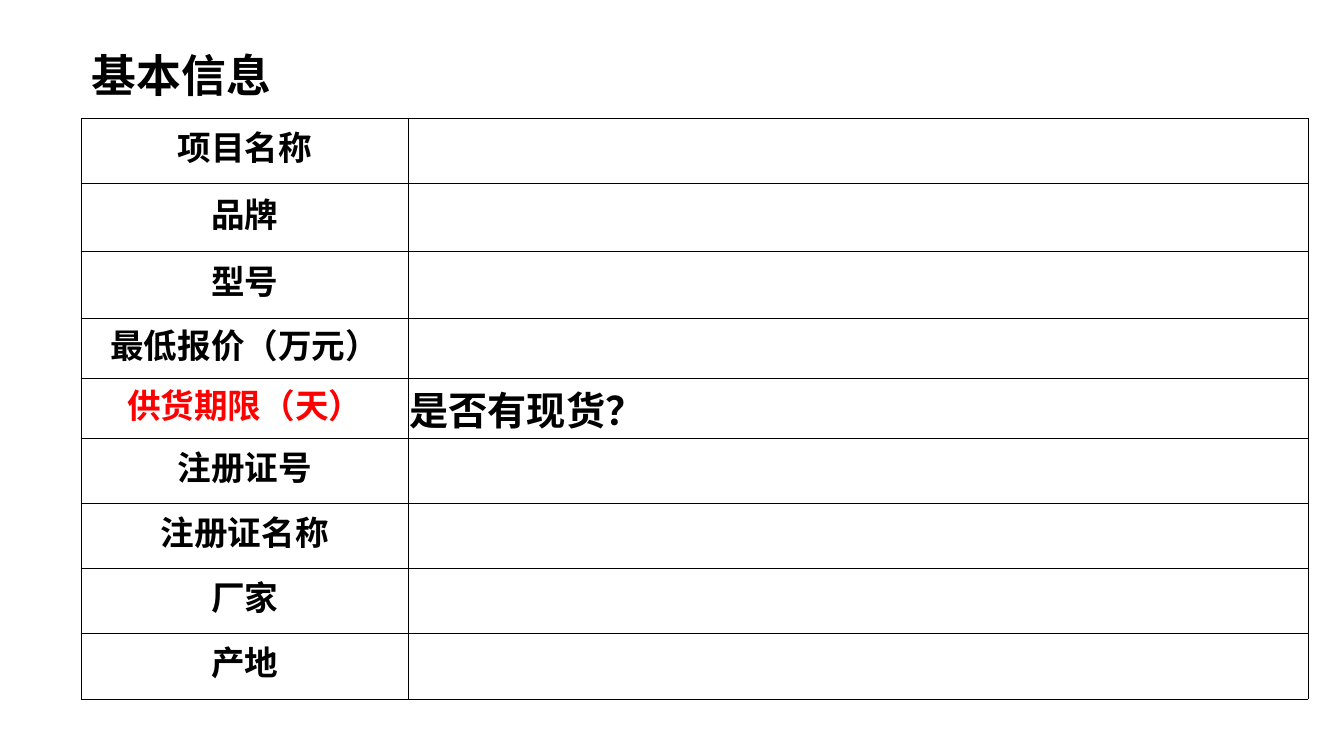
from dataclasses import dataclass
from lxml import etree
from pptx import Presentation
from pptx import util as u
from pptx.dml import color
from pptx.enum import text
from pptx.oxml import ns


@dataclass(frozen=True)
class Theme:
    ink: str = "000000"
    alert: str = "FF0000"
    sans: str = "Noto Sans CJK SC"
    latin: str = "Arial"
    title: int = 32
    note: int = 28
    label: int = 24
    rule: float = 0.5


THEME = Theme()
TALL, MID, LOW = u.Cm(1.7), u.Cm(1.64), u.Cm(1.51)
ROWS = [
    ("项目名称", "", MID),
    ("品牌", "", TALL),
    ("型号", "", TALL),
    ("最低报价（万元）", "", LOW),
    ("供货期限（天）", "是否有现货？", LOW),
    ("注册证号", "", MID),
    ("注册证名称", "", MID),
    ("厂家", "", MID),
    ("产地", "", MID),
]
URGENT = "供货期限（天）"


def add_run(para, words, size, face, ink=THEME.ink):
    run = para.add_run()
    run.text = words
    font = run.font
    font.size, font.bold, font.name = u.Pt(size), True, face
    font.color.rgb = color.RGBColor.from_string(ink)
    east = etree.SubElement(run._r.get_or_add_rPr(), ns.qn("a:ea"))
    east.set("typeface", face)


def add_title(slide, words):
    box = slide.shapes.add_textbox(u.Cm(2.06), u.Cm(1.07), u.Cm(11), u.Cm(1.6))
    box.text_frame.word_wrap = True
    add_run(box.text_frame.paragraphs[0], words, THEME.title, THEME.sans)


def rule_cell(cell):
    props = cell._tc.get_or_add_tcPr()
    for rank, side in enumerate(("lnL", "lnR", "lnT", "lnB")):
        line = etree.Element(ns.qn(f"a:{side}"), w=str(u.Pt(THEME.rule)))
        fill = etree.SubElement(line, ns.qn("a:solidFill"))
        etree.SubElement(fill, ns.qn("a:srgbClr"), val=THEME.ink)
        props.insert(rank, line)


def style_cell(cell):
    cell.fill.background()
    cell.margin_left = cell.margin_right = cell.margin_top = u.Cm(0.03)
    cell.margin_bottom = u.Cm(0.13)
    rule_cell(cell)


def add_label(cell, words):
    cell.vertical_anchor = text.MSO_ANCHOR.MIDDLE
    para = cell.text_frame.paragraphs[0]
    para.alignment = text.PP_ALIGN.CENTER
    ink = THEME.alert if words == URGENT else THEME.ink
    add_run(para, words, THEME.label, THEME.latin, ink)


def add_form(slide, rows):
    high = sum(row[2] for row in rows)
    frame = slide.shapes.add_table(
        len(rows), 2, u.Cm(2.04), u.Cm(2.99), u.Cm(30.92), high)
    table = frame.table
    table.first_row = table.horz_banding = False
    for col, wide in zip(table.columns, (8.25, 22.67)):
        col.width = u.Cm(wide)
    for row, (label, note, tall) in zip(table.rows, rows):
        row.height = tall
        left, right = row.cells
        style_cell(left)
        style_cell(right)
        add_label(left, label)
        if note:
            para = right.text_frame.paragraphs[0]
            add_run(para, note, THEME.note, THEME.sans)


def main():
    deck = Presentation()
    deck.slide_width, deck.slide_height = u.Cm(33.87), u.Cm(19.05)
    slide = deck.slides.add_slide(deck.slide_layouts[6])
    add_title(slide, "基本信息")
    add_form(slide, ROWS)
    deck.save("out.pptx")


if __name__ == "__main__":
    main()
